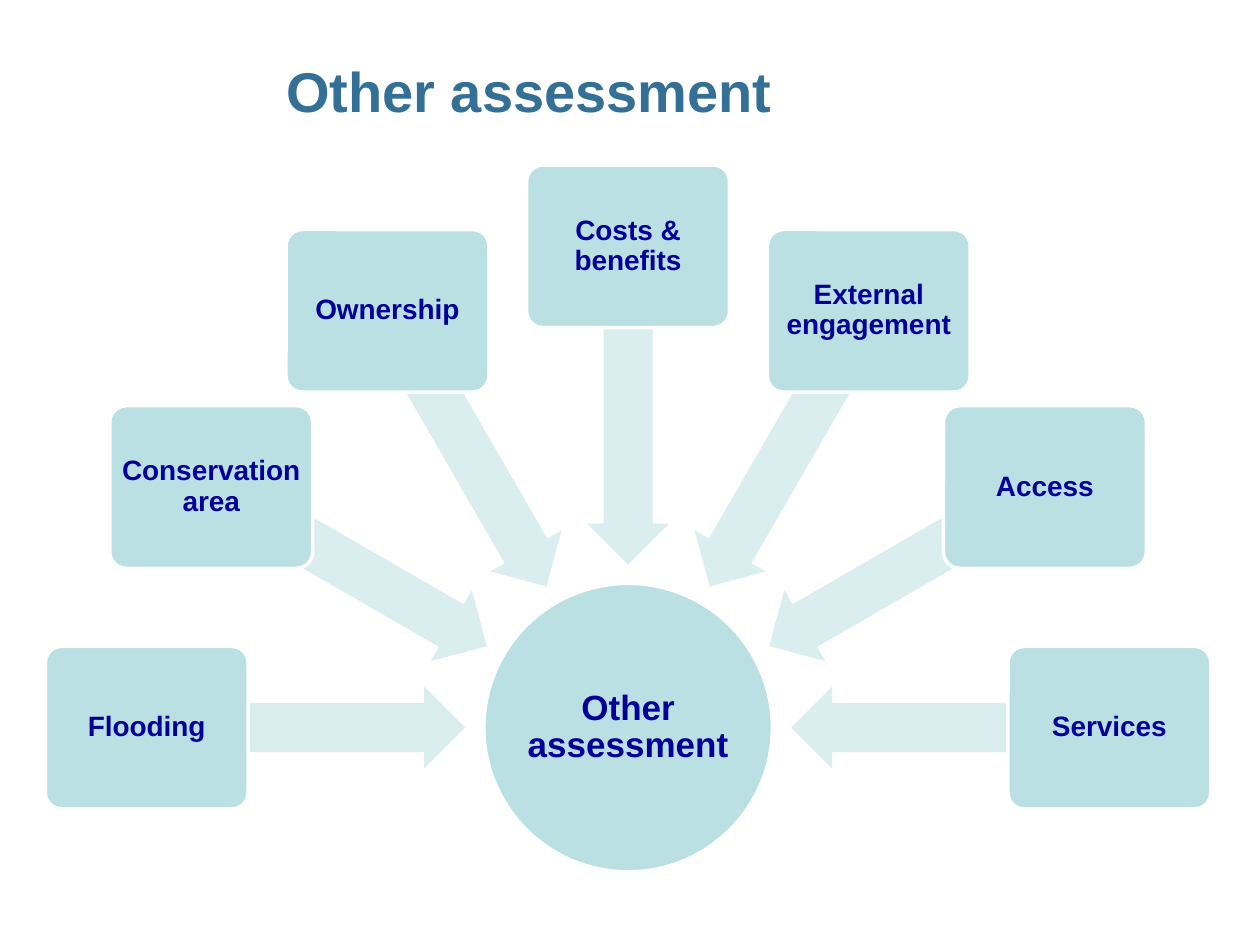
from math import cos, radians, sin

from pptx import Presentation
from pptx.dml.color import RGBColor
from pptx.enum.shapes import MSO_SHAPE
from pptx.enum.text import MSO_ANCHOR, MSO_AUTO_SIZE, PP_ALIGN
from pptx.util import Inches, Pt

TITLE_BLUE = RGBColor(0x34, 0x70, 0x95)
TEXT_BLUE = RGBColor(0x00, 0x00, 0x99)
TEAL = RGBColor(0xBB, 0xE0, 0xE3)
PALE_TEAL = RGBColor(0xDA, 0xED, 0xEF)
WHITE = RGBColor(0xFF, 0xFF, 0xFF)

FACTORS = ["Flooding", "Conservation area", "Ownership", "Costs & benefits",
           "External engagement", "Access", "Services"]


def write(shape, text, size, color, align=PP_ALIGN.CENTER,
          anchor=MSO_ANCHOR.MIDDLE, inset=None, spacing=None):
    tf = shape.text_frame
    tf.word_wrap = True
    tf.auto_size = MSO_AUTO_SIZE.NONE
    tf.vertical_anchor = anchor
    if inset is not None:
        tf.margin_left = tf.margin_right = Inches(inset)
        tf.margin_top = tf.margin_bottom = Inches(inset)
    p = tf.paragraphs[0]
    p.alignment = align
    p.line_spacing = spacing
    r = p.add_run()
    r.text = text
    r.font.name = "Arial"
    r.font.size = Pt(size)
    r.font.bold = True
    r.font.color.rgb = color


def add_centred(s, kind, cx, cy, w, h, fill, outlined=True):
    sp = s.shapes.add_shape(kind, Inches(cx - w / 2), Inches(cy - h / 2),
                            Inches(w), Inches(h))
    sp.shadow.inherit = False
    sp.fill.solid()
    sp.fill.fore_color.rgb = fill
    if outlined:
        sp.line.color.rgb = WHITE
        sp.line.width = Pt(2)
    else:
        sp.line.fill.background()
    return sp


def add_title(s, text, x, y, w, h):
    title = s.shapes.title
    title.left, title.top = Inches(x), Inches(y)
    title.width, title.height = Inches(w), Inches(h)
    write(title, text, 32, TITLE_BLUE, PP_ALIGN.LEFT, MSO_ANCHOR.TOP)


def add_radial(s, hub_text, factors, x, y, w, h):
    """Hub at the bottom centre, factors on a half circle pointing to it."""
    hub_size, box_w, box_h = 2.29, 1.61, 1.29
    cx, cy = x + w / 2, y + h - hub_size / 2
    box_radius = (w - box_w) / 2
    arrow_radius = 2.56

    # Hub
    hub = add_centred(s, MSO_SHAPE.OVAL, cx, cy, hub_size, hub_size, TEAL)
    write(hub, hub_text, 20, TEXT_BLUE, inset=0.01, spacing=0.9)

    # Arrows and factor boxes, clockwise from the left
    step = 180 / (len(factors) - 1)
    for i, factor in enumerate(factors):
        angle = 180 + i * step
        dx, dy = cos(radians(angle)), sin(radians(angle))
        arrow = add_centred(s, MSO_SHAPE.LEFT_ARROW, cx + arrow_radius * dx,
                            cy + arrow_radius * dy, 2.53, 0.65, PALE_TEAL,
                            outlined=False)
        arrow.adjustments[0] = 0.6
        arrow.adjustments[1] = 0.5
        arrow.rotation = angle % 360
        box = add_centred(s, MSO_SHAPE.ROUNDED_RECTANGLE, cx + box_radius * dx,
                          cy + box_radius * dy, box_w, box_h, TEAL)
        box.adjustments[0] = 0.1
        write(box, factor, 16, TEXT_BLUE, inset=0.03, spacing=0.9)


def main():
    prs = Presentation()
    prs.slide_width, prs.slide_height = Inches(10), Inches(7.5)
    s = prs.slides.add_slide(prs.slide_layouts[5])
    add_title(s, "Other assessment", 2.17, 0.4, 7.44, 1.06)
    add_radial(s, "Other assessment", FACTORS, 0.36, 1.31, 9.25, 5.61)
    prs.save("out.pptx")


if __name__ == "__main__":
    main()
